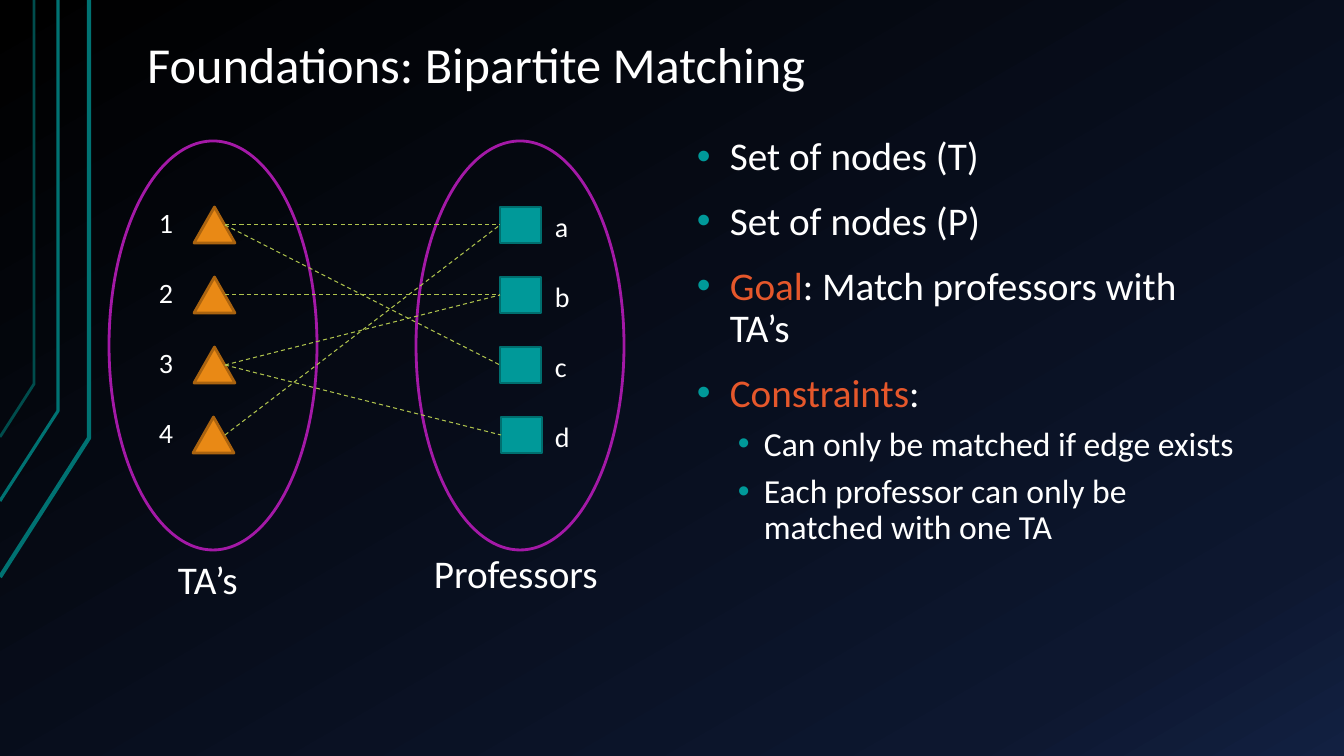
"""Build the slide on bipartite matching between TA's and professors."""
from copy import deepcopy

from pptx import Presentation
from pptx.dml.color import RGBColor
from pptx.enum.dml import MSO_LINE
from pptx.enum.shapes import MSO_CONNECTOR, MSO_SHAPE
from pptx.enum.text import MSO_ANCHOR
from pptx.oxml.ns import qn
from pptx.oxml.xmlchemy import OxmlElement
from pptx.util import Pt

SCALE = 914400 / 100.8
WHITE = RGBColor(0xFF, 0xFF, 0xFF)
BLACK = RGBColor(0x00, 0x00, 0x00)
NAVY = RGBColor(0x0D, 0x17, 0x2F)
BLUE = RGBColor(0x12, 0x20, 0x41)
TEAL = RGBColor(0x00, 0x99, 0x99)
EDGE = RGBColor(0x00, 0x6F, 0x6F)
TRIM = RGBColor(0x00, 0x72, 0x72)
DIM = RGBColor(0x00, 0x4C, 0x4C)
AMBER = RGBColor(0xE9, 0x89, 0x15)
BROWN = RGBColor(0xAA, 0x63, 0x0F)
PURPLE = RGBColor(0xA4, 0x19, 0xA7)
LIME = RGBColor(0xAF, 0xC3, 0x4D)
RED = RGBColor(0xE5, 0x57, 0x2B)

TOP, STEP, WIDE, HIGH = 207, 70, 41, 36
TRIMS = [
    ([(0, 577), (89, 438), (89, 0)], TRIM, 3),
    ([(0, 501), (58, 411), (58, 0)], TRIM, 2.25),
    ([(0, 437), (34, 384), (34, 0)], DIM, 2),
]
LINKS = [(0, 0), (1, 1), (2, 1), (2, 3), (3, 0), (0, 2)]
POINTS = [
    (0, 0, [("Set of nodes (T)", WHITE)]),
    (0, 16, [("Set of nodes (P)", WHITE)]),
    (0, 16, [("Goal", RED), (": Match professors with TA’s", WHITE)]),
    (0, 16, [("Constraints", RED), (":", WHITE)]),
    (1, 8, [("Can only be matched if edge exists", WHITE)]),
    (1, 8, [("Each professor can only be matched with one TA", WHITE)]),
]
LEVELS = [(28, 33, -33), (24, 67, -26)]


def px(num):
    """Turn pixels into EMU."""
    return round(num * SCALE)


def put(item, **form):
    """Set each named format value on an item."""
    for name, value in form.items():
        setattr(item, name, value)


def stroke(line, tint, width):
    """Give a line its colour and width."""
    line.color.rgb = tint
    line.width = Pt(width)


def paint(slide):
    """Fill the background with the slanted blend."""
    fill = slide.background.fill
    fill.gradient()
    fill.gradient_angle = 300
    stops = slide._element.find(".//" + qn("a:gsLst"))
    stops.append(deepcopy(stops[0]))
    blend = [(0, BLACK), (0.85, NAVY), (1, BLUE)]
    for stop, (place, tint) in zip(fill.gradient_stops, blend):
        stop.position = place
        stop.color.rgb = tint


def trim(slide, spots, tint, width):
    """Draw one open bent line of the side trim."""
    pen = slide.shapes.build_freeform(*spots[0], scale=SCALE)
    pen.add_line_segments(spots[1:], close=False)
    shape = pen.convert_to_shape()
    shape.fill.background()
    shape.shadow.inherit = False
    stroke(shape.line, tint, width)


def node(slide, kind, box, tint, fill=None):
    """Draw an outlined shape and fill it if a colour is given."""
    shape = slide.shapes.add_shape(kind, *map(px, box))
    shape.shadow.inherit = False
    stroke(shape.line, tint, 2)
    if fill is None:
        shape.fill.background()
    else:
        shape.fill.solid()
        shape.fill.fore_color.rgb = fill
    return shape


def frame(slide, box, **form):
    """Add a wrapping text box and return its text frame."""
    text = slide.shapes.add_textbox(*map(px, box)).text_frame
    put(text, word_wrap=True, **form)
    return text


def write(para, words, size, tint=WHITE):
    """Add a run of words to a paragraph."""
    run = para.add_run()
    put(run, text=words)
    put(run.font, name="Calibri", size=Pt(size))
    run.font.color.rgb = tint


def label(slide, box, words, size):
    """Place a short plain label."""
    write(frame(slide, box).paragraphs[0], words, size)


def bullet(para, left, hang):
    """Give a paragraph a teal bullet and a hanging indent."""
    props = para._p.get_or_add_pPr()
    props.set("marL", str(px(left)))
    props.set("indent", str(px(hang)))
    tint = OxmlElement("a:buClr")
    value = OxmlElement("a:srgbClr")
    value.set("val", str(TEAL))
    tint.append(value)
    font = OxmlElement("a:buFont")
    font.set("typeface", "Arial")
    mark = OxmlElement("a:buChar")
    mark.set("char", "•")
    for part in (tint, font, mark):
        props.append(part)


def points(slide):
    """Write the bullet list on the right."""
    text = frame(slide, (687, 132, 559, 492))
    for num, (level, space, runs) in enumerate(POINTS):
        para = text.add_paragraph() if num else text.paragraphs[0]
        size, left, hang = LEVELS[level]
        put(para, level=level, line_spacing=0.9, space_before=Pt(space))
        bullet(para, left, hang)
        for words, tint in runs:
            write(para, words, size, tint)


def link(slide, row, goal):
    """Draw a dashed edge from a TA's row to a professor's square."""
    start = px(225), px(TOP + HIGH // 2 + STEP * row)
    edge = slide.shapes.add_connector(MSO_CONNECTOR.STRAIGHT, *start, *start)
    edge.end_connect(goal, 1)
    stroke(edge.line, LIME, 0.75)
    edge.line.dash_style = MSO_LINE.DASH
    edge._element.spPr.append(OxmlElement("a:effectLst"))


def graph(slide):
    """Draw both sets of nodes with their labels and edges."""
    squares = []
    for row, (num, char) in enumerate(zip("1234", "abcd")):
        top, shift = TOP + STEP * row, row // 3
        node(slide, MSO_SHAPE.ISOSCELES_TRIANGLE,
             (194 - shift, top, WIDE, HIGH), BROWN, AMBER)
        squares.append(node(slide, MSO_SHAPE.RECTANGLE,
                            (500 + shift, top, WIDE, HIGH), EDGE, TEAL))
        label(slide, (149, top - 6, 50, 47), num, 20)
        label(slide, (545, top - 2, 50, 47), char, 20)
    for left in (109, 416):
        node(slide, MSO_SHAPE.OVAL, (left, 141, 208, 409), PURPLE)
    label(slide, (168, 550, 104, 62), "TA’s", 28)
    label(slide, (424, 544, 239, 62), "Professors", 28)
    for row, goal in LINKS:
        link(slide, row, squares[goal])


def main():
    """Build and save the deck."""
    deck = Presentation()
    put(deck, slide_width=px(1344), slide_height=px(756))
    slide = deck.slides.add_slide(deck.slide_layouts[6])
    paint(slide)
    for spots, tint, width in TRIMS:
        trim(slide, spots, tint, width)
    title = frame(slide, (134, 30, 1142, 71), vertical_anchor=MSO_ANCHOR.BOTTOM,
                  margin_left=px(13), margin_right=px(13),
                  margin_top=px(7), margin_bottom=px(7)).paragraphs[0]
    put(title, line_spacing=0.9)
    write(title, "Foundations: Bipartite Matching", 36)
    points(slide)
    graph(slide)
    deck.save("out.pptx")


if __name__ == "__main__":
    main()
